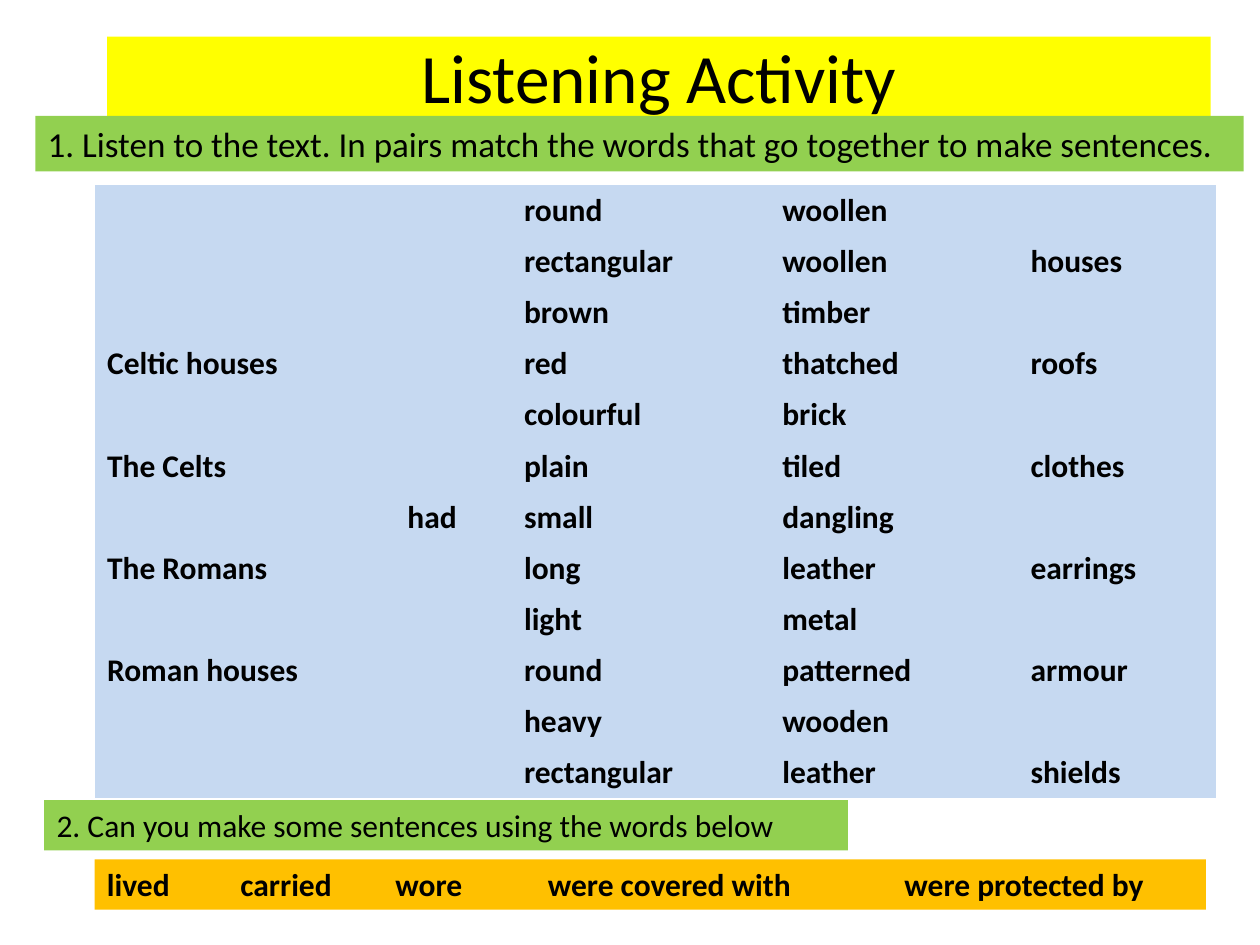
import pptx
import pptx.dml.color
import pptx.enum.shapes
import pptx.enum.text
import pptx.oxml.ns
import pptx.util
from lxml import etree
from pptx.util import Inches

ALIGN = pptx.enum.text.PP_ALIGN
ANCHOR = pptx.enum.text.MSO_ANCHOR

COLUMN_WIDTHS = [2.05, 1.26, 2.05, 1.97, 1.57]
SUBJECTS = {3: "Celtic houses", 5: "The Celts", 7: "The Romans", 9: "Roman houses"}
VERBS = {6: "had"}
ADJECTIVES = ["round", "rectangular", "brown", "red", "colourful", "plain",
              "small", "long", "light", "round", "heavy", "rectangular"]
MATERIALS = ["woollen", "woollen", "timber", "thatched", "brick", "tiled",
             "dangling", "leather", "metal", "patterned", "wooden", "leather"]
NOUNS = {1: "houses", 3: "roofs", 5: "clothes", 7: "earrings", 9: "armour", 11: "shields"}
WORD_COLUMNS = [SUBJECTS, VERBS, dict(enumerate(ADJECTIVES)),
                dict(enumerate(MATERIALS)), NOUNS]
VERB_PHRASES = ["lived", "carried", "wore", "were covered with", "were protected by"]
VERB_TABS = [1.06, 2.29, 3.5, 6.33]


def paint(fill, color):
    fill.solid()
    fill.fore_color.rgb = pptx.dml.color.RGBColor.from_string(color)


def write(tf, text, size=18, bold=False, color="000000", align=ALIGN.LEFT):
    p = tf.paragraphs[0]
    p.alignment = align
    r = p.add_run()
    r.text = text
    r.font.name = "Calibri"
    r.font.size = pptx.util.Pt(size)
    r.font.bold = bold
    paint(r.font.fill, color)
    return p


def add_banner(slide, left, top, width, height, fill, text, anchor=ANCHOR.TOP, **fmt):
    sp = slide.shapes.add_shape(pptx.enum.shapes.MSO_SHAPE.RECTANGLE,
                                Inches(left), Inches(top), Inches(width), Inches(height))
    sp.shadow.inherit = False
    sp.line.fill.background()
    paint(sp.fill, fill)
    sp.text_frame.word_wrap = True
    sp.text_frame.vertical_anchor = anchor
    return write(sp.text_frame, text, **fmt)


def set_tabs(p, stops):
    qn = pptx.oxml.ns.qn
    tabs = etree.SubElement(p._p.get_or_add_pPr(), qn("a:tabLst"))
    for stop in stops:
        etree.SubElement(tabs, qn("a:tab"), pos=str(int(Inches(stop))), algn="l")


def add_word_table(slide):
    rows = len(ADJECTIVES)
    table = slide.shapes.add_table(rows, len(WORD_COLUMNS), Inches(0.75), Inches(1.47),
                                   Inches(sum(COLUMN_WIDTHS)), Inches(4.87)).table
    table.first_row = False
    table.horz_banding = False
    for col, (width, words) in enumerate(zip(COLUMN_WIDTHS, WORD_COLUMNS)):
        table.columns[col].width = Inches(width)
        align = ALIGN.CENTER if words is VERBS else ALIGN.LEFT
        for row in range(rows):
            cell = table.cell(row, col)
            paint(cell.fill, "C6D9F1")
            if row in words:
                write(cell.text_frame, words[row], bold=True, align=align)
    tbl_style = table._tbl.tblPr.find(pptx.oxml.ns.qn("a:tableStyleId"))
    tbl_style.text = "{2D5ABB26-0587-4C30-8999-92F81FD0307C}"


def main():
    prs = pptx.Presentation()
    prs.slide_width = Inches(10)
    prs.slide_height = Inches(7.5)
    slide = prs.slides.add_slide(prs.slide_layouts[6])

    add_banner(slide, 0.85, 0.29, 8.76, 0.63, "FFFF00", "Listening Activity",
               anchor=ANCHOR.MIDDLE, size=39.6, align=ALIGN.CENTER)
    add_word_table(slide)
    verbs = add_banner(slide, 0.75, 6.82, 8.82, 0.4, "FFC000",
                       "\t".join(VERB_PHRASES), bold=True)
    set_tabs(verbs, VERB_TABS)
    add_banner(slide, 0.28, 0.92, 9.59, 0.44, "92D050",
               "1. Listen to the text. In pairs match the words that go together "
               "to make sentences.", size=20)
    add_banner(slide, 0.35, 6.35, 6.38, 0.4, "92D050",
               "2. Can you make some sentences using the words below")
    prs.save("out.pptx")


if __name__ == "__main__":
    main()
